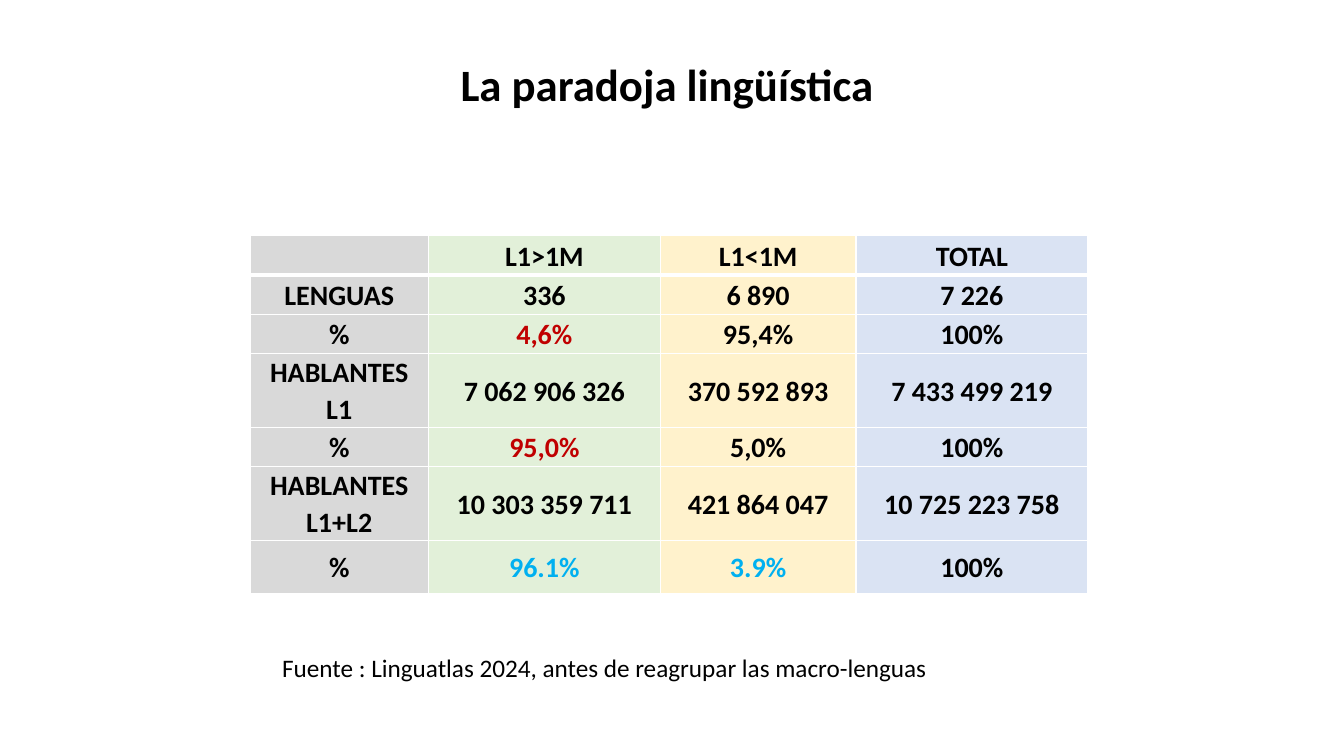
from lxml import etree
from pptx import Presentation
from pptx.dml.color import RGBColor
from pptx.enum.text import MSO_ANCHOR, MSO_AUTO_SIZE, PP_ALIGN
from pptx.oxml.ns import qn
from pptx.util import Inches, Pt

CENTER = PP_ALIGN.CENTER
MIDDLE = MSO_ANCHOR.MIDDLE
FIT_SHAPE = MSO_AUTO_SIZE.SHAPE_TO_FIT_TEXT

COLORS = {
    "black": "000000", "white": "FFFFFF", "red": "C00000", "blue": "00B0F0",
    "label": "D9D9D9", "large": "E2F0D9", "small": "FFF2CC", "total": "DAE3F3",
}


def write_text(frame, text, size=20, color="black", bold=True, align=None, spacing=None):
    paragraph = frame.paragraphs[0]
    paragraph.alignment = align
    paragraph.line_spacing = spacing
    if text:
        run = paragraph.add_run()
        run.text = text
        run.font.name = "Calibri"
        run.font.size = Pt(size)
        run.font.bold = bold
        run.font.color.rgb = RGBColor.from_string(COLORS[color])


def add_border(cell, side, width):
    line = etree.SubElement(cell._tc.get_or_add_tcPr(), qn(f"a:ln{side}"), w=str(Pt(width)))
    fill = etree.SubElement(line, qn("a:solidFill"))
    etree.SubElement(fill, qn("a:srgbClr"), val=COLORS["white"])


presentation = Presentation()
presentation.slide_width = Inches(13.33)
presentation.slide_height = Inches(7.5)
slide = presentation.slides.add_slide(presentation.slide_layouts[6])

# Title and source note
captions = [
    ("La paradoja lingüística", (4.47, 0.51, 4.33, 0.64), 32, True),
    ("Fuente : Linguatlas 2024, antes de reagrupar las macro-lenguas",
     (2.7, 6.42, 6.82, 0.4), 18, False),
]
for text, place, size, bold in captions:
    frame = slide.shapes.add_textbox(*map(Inches, place)).text_frame
    frame.word_wrap = False
    frame.auto_size = FIT_SHAPE
    write_text(frame, text, size=size, bold=bold)

# Table of languages and speakers
rows = [
    ["", "L1>1M", "L1<1M", "TOTAL"],
    ["LENGUAS", "336", "6 890", "7 226"],
    ["%", "4,6%", "95,4%", "100%"],
    ["HABLANTES L1", "7 062 906 326", "370 592 893", "7 433 499 219"],
    ["%", "95,0%", "5,0%", "100%"],
    ["HABLANTES L1+L2", "10 303 359 711", "421 864 047", "10 725 223 758"],
    ["%", "96.1%", "3.9%", "100%"],
]
column_widths = [1.77, 2.3, 1.94, 2.3]
row_heights = [0.39, 0.39, 0.39, 0.73, 0.39, 0.73, 0.53]
column_fills = ["label", "large", "small", "total"]
highlights = {"4,6%": "red", "95,0%": "red", "96.1%": "blue", "3.9%": "blue"}

table = slide.shapes.add_table(
    len(rows), len(column_widths), Inches(2.48), Inches(2.34),
    Inches(sum(column_widths)), Inches(sum(row_heights))).table
for column, width in zip(table.columns, column_widths):
    column.width = Inches(width)
for row, height in zip(table.rows, row_heights):
    row.height = Inches(height)

for row_index, values in enumerate(rows):
    for column_index, value in enumerate(values):
        cell = table.cell(row_index, column_index)
        cell.margin_left = cell.margin_right = Inches(0.05)
        cell.margin_top = cell.margin_bottom = 0
        cell.vertical_anchor = MIDDLE
        # A thicker rule separates the header from the body
        top = 3 if row_index == 1 else 1
        bottom = 3 if row_index == 0 else 1
        for side, width in (("L", 1), ("R", 1), ("T", top), ("B", bottom)):
            add_border(cell, side, width)
        cell.fill.solid()
        cell.fill.fore_color.rgb = RGBColor.from_string(COLORS[column_fills[column_index]])
        write_text(cell.text_frame, value, color=highlights.get(value, "black"),
                   align=CENTER, spacing=1.07)

presentation.save("out.pptx")
